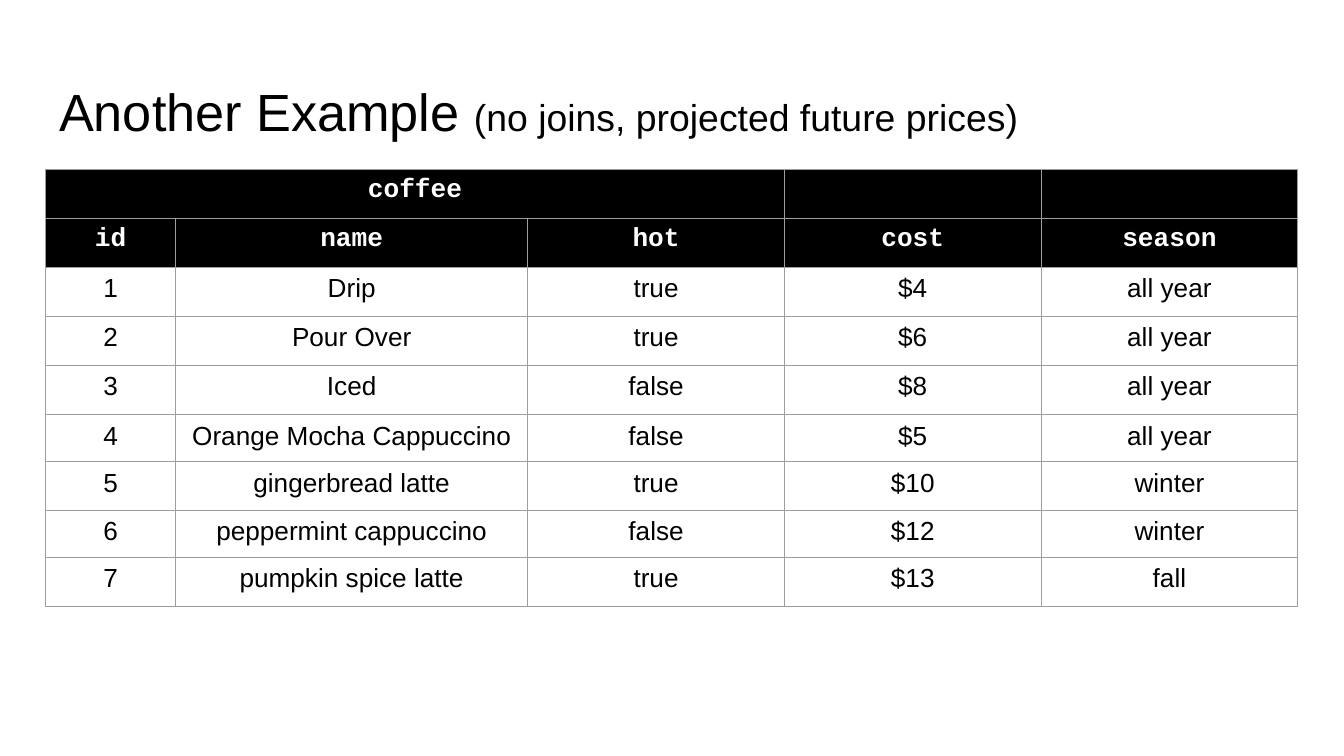
from lxml import etree
from pptx import Presentation
from pptx.dml.color import RGBColor
from pptx.enum.text import MSO_ANCHOR, MSO_AUTO_SIZE, PP_ALIGN
from pptx.oxml.ns import qn
from pptx.util import Inches, Pt

BLACK = RGBColor(0x00, 0x00, 0x00)
WHITE = RGBColor(0xFF, 0xFF, 0xFF)
GREY = RGBColor(0x9E, 0x9E, 0x9E)
LEFT, CENTER = PP_ALIGN.LEFT, PP_ALIGN.CENTER
TOP = MSO_ANCHOR.TOP
NO_FIT = MSO_AUTO_SIZE.NONE
TITLE_ONLY = 5
GRID = 0.1

COLUMN_WIDTHS = [9.67, 26.2, 19.1, 19.1, 19.1]
ROW_HEIGHTS = [3.65] * 5 + [3.5, 3.63, 3.5, 3.63]
HEADER_ROWS = 2
COFFEES = [
    ["coffee", "", "", "", ""],
    ["id", "name", "hot", "cost", "season"],
    ["1", "Drip", "true", "$4", "all year"],
    ["2", "Pour Over", "true", "$6", "all year"],
    ["3", "Iced", "false", "$8", "all year"],
    ["4", "Orange Mocha Cappuccino", "false", "$5", "all year"],
    ["5", "gingerbread latte", "true", "$10", "winter"],
    ["6", "peppermint cappuccino", "false", "$12", "winter"],
    ["7", "pumpkin spice latte", "true", "$13", "fall"],
]


def units(count):
    return Inches(count * GRID)


def write(para, text, size=14, font="Arial", color=BLACK, bold=False, align=CENTER):
    para.alignment = align
    if not text:
        end = etree.SubElement(para._p, qn("a:endParaRPr"))
        end.set("sz", str(size * 100))
        return
    span = para.add_run()
    span.text = text
    span.font.size = Pt(size)
    span.font.name = font
    span.font.bold = bold
    span.font.color.rgb = color


class SlideBuilder:
    header = {"font": "Courier New", "color": WHITE, "bold": True}
    border_color = GREY
    border_width = Pt(0.75)

    def __init__(self, deck):
        self.page = deck.slides.add_slide(deck.slide_layouts[TITLE_ONLY])

    def title(self, parts, left, top, width, height):
        box = self.page.shapes.title
        box.left, box.top = units(left), units(top)
        box.width, box.height = units(width), units(height)
        frame = box.text_frame
        frame.auto_size = NO_FIT
        frame.word_wrap = True
        frame.vertical_anchor = TOP
        frame.margin_left = frame.margin_right = units(1)
        frame.margin_top = frame.margin_bottom = units(1)
        for text, size in parts:
            write(frame.paragraphs[0], text, size=size, align=LEFT)

    def table(self, values, widths, heights, left, top):
        table = self.page.shapes.add_table(
            len(heights), len(widths), units(left), units(top),
            units(sum(widths)), units(sum(heights))).table
        table.first_row = table.horz_banding = False
        for column, width in zip(table.columns, widths):
            column.width = units(width)
        for row, height in zip(table.rows, heights):
            row.height = units(height)
        for r, texts in enumerate(values):
            for c, text in enumerate(texts):
                self.cell(table.cell(r, c), text, r < HEADER_ROWS)
        table.cell(0, 0).merge(table.cell(0, 2))

    def cell(self, cell, text, is_header):
        cell.margin_left = cell.margin_right = units(0.5)
        cell.margin_top = cell.margin_bottom = units(0.5)
        cell.vertical_anchor = TOP
        self.borders(cell)
        if is_header:
            cell.fill.solid()
            cell.fill.fore_color.rgb = BLACK
        else:
            cell.fill.background()
        write(cell.text_frame.paragraphs[0], text, **(self.header if is_header else {}))

    def borders(self, cell):
        properties = cell._tc.get_or_add_tcPr()
        for side in ("a:lnL", "a:lnR", "a:lnT", "a:lnB"):
            line = etree.SubElement(properties, qn(side), w=str(self.border_width))
            fill = etree.SubElement(line, qn("a:solidFill"))
            etree.SubElement(fill, qn("a:srgbClr"), val=str(self.border_color))


def main():
    deck = Presentation()
    deck.slide_width = Inches(10)
    deck.slide_height = deck.slide_width * 9 // 16
    builder = SlideBuilder(deck)
    builder.title(
        [("Another Example ", 28), ("(no joins, projected future prices)", 20)],
        left=3.4, top=4.9, width=93.2, height=6.3)
    builder.table(COFFEES, COLUMN_WIDTHS, ROW_HEIGHTS, left=3.4, top=12.6)
    deck.save("out.pptx")


if __name__ == "__main__":
    main()
